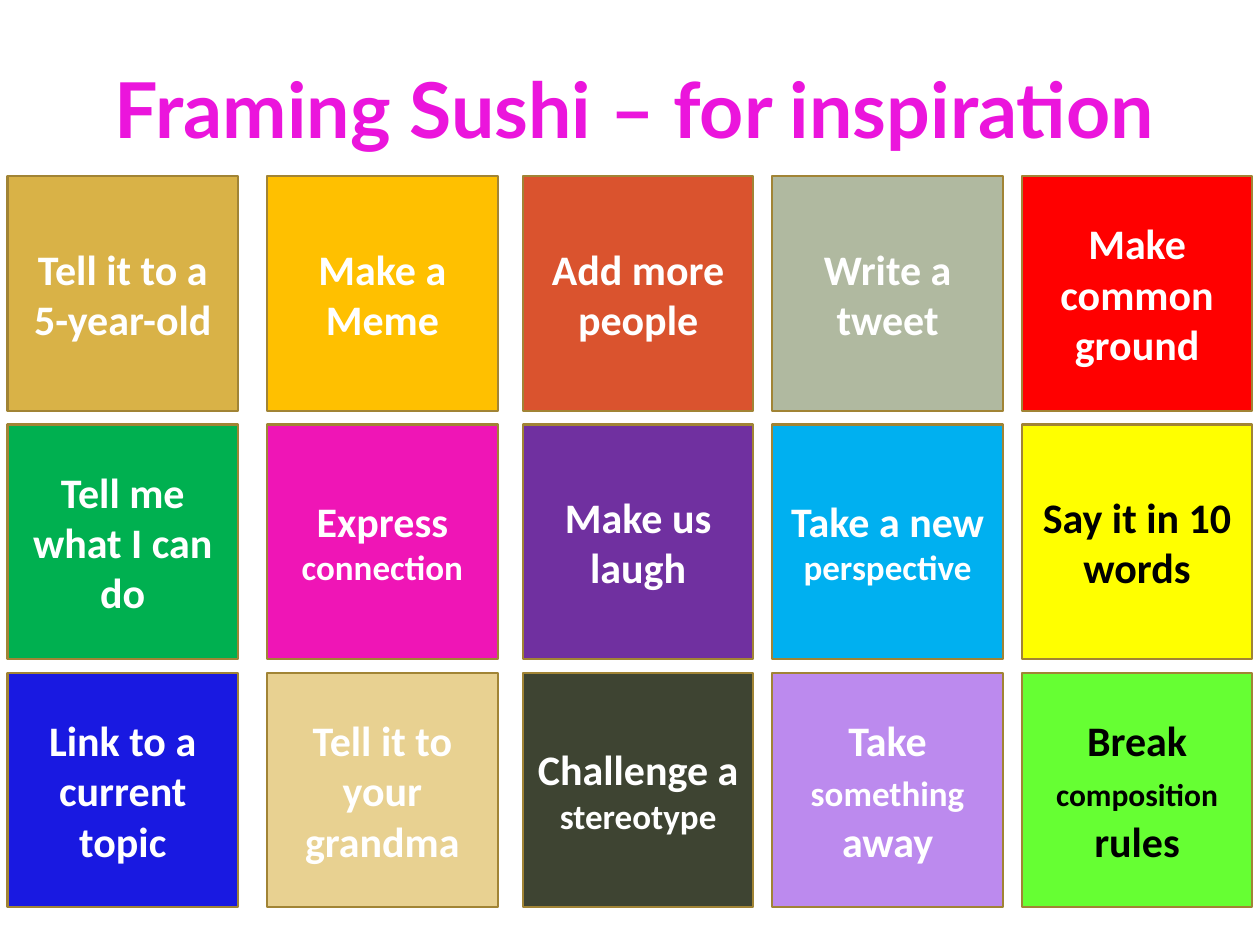
from pptx import Presentation
from pptx.dml.color import RGBColor as RGB
from pptx.enum.shapes import MSO_SHAPE as Shape
from pptx.enum.text import MSO_ANCHOR as Anchor, MSO_AUTO_SIZE as Fit, PP_ALIGN as Align
from pptx.util import Inches, Pt

HUE = {
    "title": "EB15DC", "edge": "A18435", "white": "FFFFFF", "black": "000000",
    "sand": "D9B247", "amber": "FFC000", "rust": "DA532E", "sage": "B0B9A0",
    "red": "FF0000", "green": "00B050", "pink": "EF15B6", "plum": "7030A0",
    "sky": "00B0F0", "yellow": "FFFF00", "blue": "1919E1", "cream": "E8D191",
    "olive": "3E4432", "lilac": "BC8AEE", "lime": "66FF33",
}

# Grid: column lefts, then the row rule and tile size
COLS = [0.06, 2.12, 4.15, 6.13, 8.11]
TOP, STEP = 1.4, 1.97
WIDE, HIGH = 1.83, 1.86
BIG = 24

# Each tile: fill name, then text runs; a pair carries its own size
ROWS = [
    [("sand", "Tell it to a 5-year-old"), ("amber", "Make a Meme"),
     ("rust", "Add more people"), ("sage", "Write a tweet"),
     ("red", "Make common ground")],
    [("green", "Tell me what I can do"), ("pink", "Express ", ("connection", 20)),
     ("plum", "Make us laugh"), ("sky", "Take a new ", ("perspective", 20)),
     ("yellow", "Say it in 10 words")],
    [("blue", "Link to a current topic"), ("cream", "Tell it to your grandma"),
     ("olive", "Challenge a ", ("stereotype", 20)),
     ("lilac", "Take ", ("something", 20), " away"),
     ("lime", "Break ", ("composition", 18), " rules")],
]


def color(name):
    return RGB.from_string(HUE[name])


def add_run(par, text, size, face, hue):
    run = par.add_run()
    run.text = text
    look = {"size": Pt(size), "name": face, "bold": True}
    for key, val in look.items():
        setattr(run.font, key, val)
    run.font.color.rgb = color(hue)


def add_title(slide, text):
    title = slide.shapes.title
    place = {"left": 0.04, "top": 0.44, "width": 10, "height": 0.77}
    for key, val in place.items():
        setattr(title, key, Inches(val))
    frame = title.text_frame
    form = {"vertical_anchor": Anchor.TOP, "auto_size": Fit.NONE, "word_wrap": True}
    for key, val in form.items():
        setattr(frame, key, val)
    par = frame.paragraphs[0]
    par.alignment = Align.CENTER
    add_run(par, text, 44, "Lato", "title")


def add_tile(slide, col, row, fill, parts):
    box = (COLS[col], TOP + row * STEP, WIDE, HIGH)
    tile = slide.shapes.add_shape(Shape.RECTANGLE, *map(Inches, box))
    tile.shadow.inherit = False
    tile.fill.solid()
    tile.fill.fore_color.rgb = color(fill)
    tile.line.color.rgb = color("edge")
    tile.line.width = Pt(1.25)
    frame = tile.text_frame
    frame.word_wrap = True
    frame.vertical_anchor = Anchor.MIDDLE
    par = frame.paragraphs[0]
    par.alignment = Align.CENTER
    ink = "black" if fill in ("yellow", "lime") else "white"
    for part in parts:
        text, size = (part, BIG) if isinstance(part, str) else part
        add_run(par, text, size, "Calibri", ink)


def main():
    deck = Presentation()
    deck.slide_width, deck.slide_height = Inches(10), Inches(7.5)
    slide = deck.slides.add_slide(deck.slide_layouts[5])
    # Tiles
    for row, tiles in enumerate(ROWS):
        for col, (fill, *parts) in enumerate(tiles):
            add_tile(slide, col, row, fill, parts)
    # Heading
    add_title(slide, "Framing Sushi – for inspiration")
    deck.save("out.pptx")


if __name__ == "__main__":
    main()
